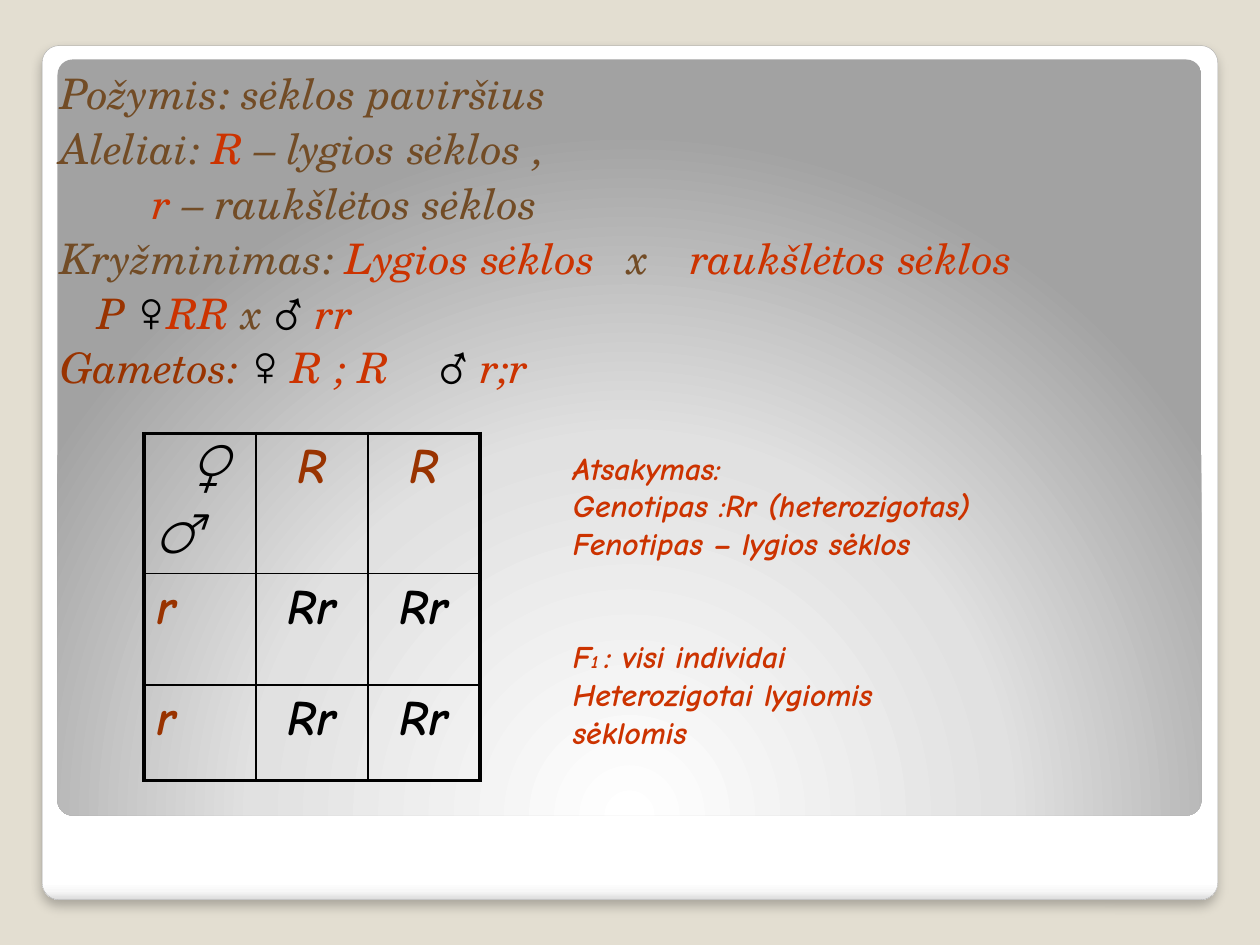
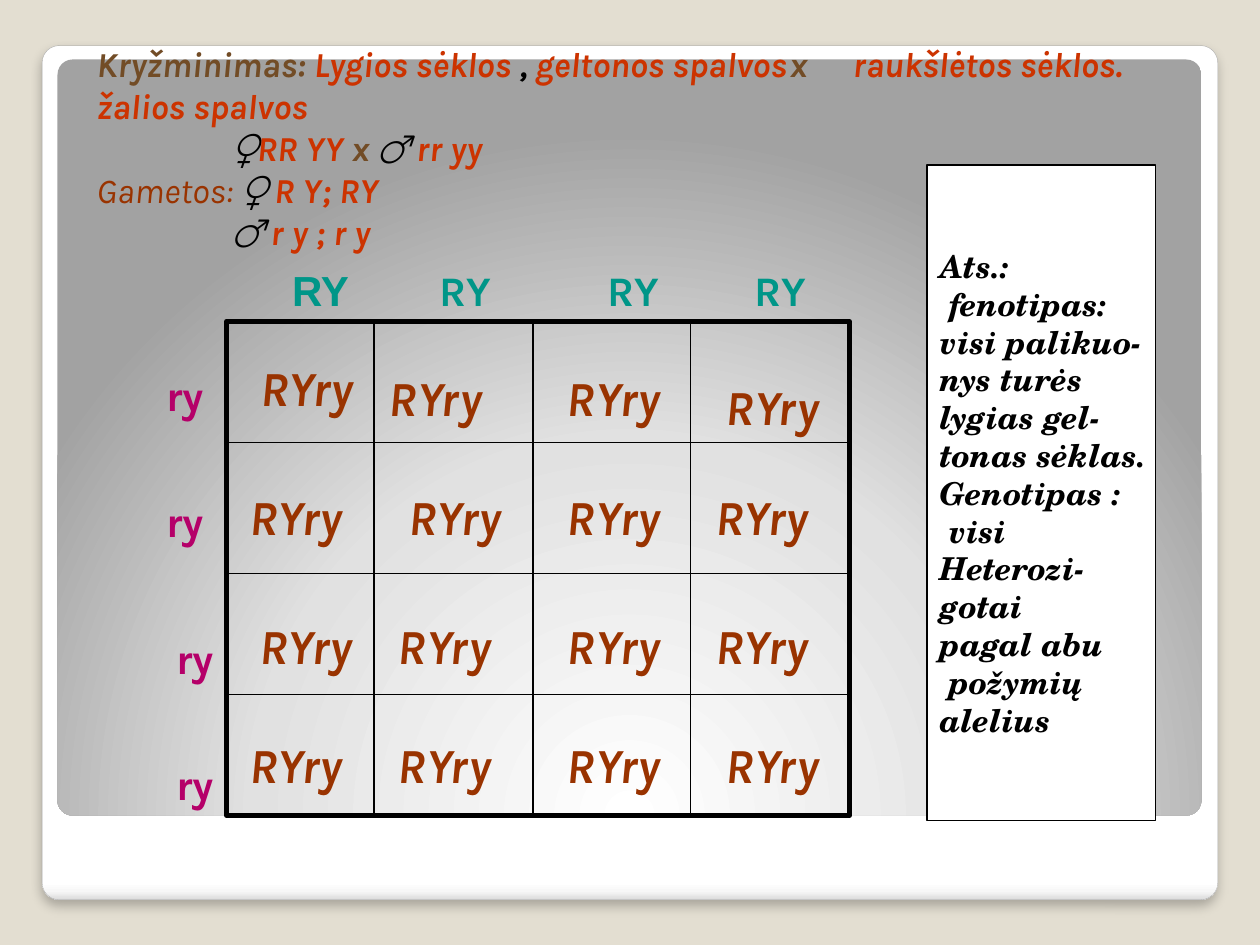
from lxml import etree
from pptx import Presentation
from pptx.dml.color import RGBColor
from pptx.enum.shapes import MSO_CONNECTOR, MSO_SHAPE
from pptx.enum.text import MSO_ANCHOR, MSO_AUTO_SIZE, PP_ALIGN
from pptx.oxml import parse_xml
from pptx.oxml.ns import nsdecls, qn
from pptx.util import Cm, Pt

RECT, ROUND = MSO_SHAPE.RECTANGLE, MSO_SHAPE.ROUNDED_RECTANGLE
LINE = MSO_CONNECTOR.STRAIGHT
LEFT, CENTER = PP_ALIGN.LEFT, PP_ALIGN.CENTER
MIDDLE = MSO_ANCHOR.MIDDLE
GROW, FIXED = MSO_AUTO_SIZE.SHAPE_TO_FIT_TEXT, MSO_AUTO_SIZE.NONE

SAND = RGBColor(0xE3, 0xDE, 0xD1)
GREY = RGBColor(0xA4, 0xA4, 0xA4)
WHITE = RGBColor(0xFF, 0xFF, 0xFF)
BLACK = RGBColor(0, 0, 0)
BROWN = RGBColor(0x72, 0x4C, 0x26)
RED = RGBColor(0xCC, 0x33, 0x00)
RUST = RGBColor(0x99, 0x33, 0x00)
TEAL = RGBColor(0x00, 0x96, 0x88)
PINK = RGBColor(0xB5, 0x00, 0x69)

SERIF, COMIC, KARLA, ARIAL = "TeX Gyre Schola", "Comic Neue", "Karla", "Arial"


def write(frame, rows, face, size, color, bold=False, italic=False):
    """Fill a frame; a row is a text or a list of texts and (text, color)."""
    for n, row in enumerate(rows):
        para = frame.add_paragraph() if n else frame.paragraphs[0]
        font = para.font
        font.name, font.size = face, Pt(size)
        font.bold, font.italic = bold, italic
        font.color.rgb = color
        para.alignment = LEFT
        for piece in [row] if isinstance(row, str) else row:
            text, tint = (piece, None) if isinstance(piece, str) else piece
            run = para.add_run()
            run.text = text
            if tint is not None:
                run.font.color.rgb = tint


def indent(para, left, *tabs):
    """Set a plain left indent and tab stops, without a bullet."""
    props = para._p.get_or_add_pPr()
    props.set("marL", str(Cm(left)))
    props.set("indent", "0")
    last = props.find(qn("a:defRPr"))
    last.addprevious(parse_xml(f"<a:buNone {nsdecls('a')}/>"))
    if tabs:
        stops = "".join(f'<a:tab pos="{Cm(t)}" algn="l"/>' for t in tabs)
        last.addprevious(
            parse_xml(f"<a:tabLst {nsdecls('a')}>{stops}</a:tabLst>"))


def add_text(slide, box, rows, face, size, color, wrap=True, **style):
    frame = slide.shapes.add_textbox(*map(Cm, box)).text_frame
    frame.word_wrap = wrap
    frame.auto_size = GROW
    write(frame, rows, face, size, color, **style)
    return frame


def add_box(slide, kind, box, width=None, line=BLACK, fill=None):
    shape = slide.shapes.add_shape(kind, *map(Cm, box))
    shape.shadow.inherit = False
    if fill is None:
        shape.fill.background()
    else:
        shape.fill.solid()
        shape.fill.fore_color.rgb = fill
    if width is None:
        shape.line.fill.background()
    else:
        shape.line.color.rgb = line
        shape.line.width = Pt(width)
    return shape


def add_rule(slide, *ends):
    rule = slide.shapes.add_connector(LINE, *map(Cm, ends))
    rule.line.color.rgb = BLACK
    rule.line.width = Pt(1)
    etree.SubElement(rule.element.spPr, qn("a:effectLst"))


def shade(shape, stops, way):
    """Replace an empty fill by a gradient."""
    marks = "".join(f'<a:gs pos="{at * 1000}"><a:srgbClr val="{tint}"/></a:gs>'
                    for at, tint in stops)
    props = shape.element.spPr
    props.replace(props.find(qn("a:noFill")), parse_xml(
        f'<a:gradFill {nsdecls("a")} rotWithShape="1">'
        f"<a:gsLst>{marks}</a:gsLst>{way}</a:gradFill>"))


def set_master(deck, slide):
    """Give the master the sand ground, the white card and the grey panel."""
    master = deck.slide_master
    master.background.fill.solid()
    master.background.fill.fore_color.rgb = SAND
    card = add_box(slide, ROUND, (0.85, 0.92, 23.7, 17.22), 0.16, GREY)
    shade(card, [(0, "FFFFFF"), (98, "FFFFFF"), (99, "F7F7F7"),
                 (100, "DADADA")], '<a:lin ang="5400000" scaled="0"/>')
    card.element.spPr.find(qn("a:effectLst")).append(parse_xml(
        f'<a:outerShdw {nsdecls("a")} blurRad="{Pt(6)}" dist="{Pt(4)}" '
        'dir="5400000" algn="t" rotWithShape="0"><a:srgbClr val="000000">'
        '<a:alpha val="25000"/></a:srgbClr></a:outerShdw>'))
    panel = add_box(slide, ROUND, (1.16, 1.2, 23.06, 15.24))
    shade(panel, [(0, "FFFFFF"), (55, "E1E1E1"), (100, "A2A2A2")],
          '<a:path path="circle"><a:fillToRect l="50000" t="175000" '
          'r="50000" b="-75000"/></a:path>')
    for n, shape in enumerate((card, panel)):
        shape.adjustments[0] = 0.02
        shape.element.nvSpPr.cNvPr.set("id", str(20 + n))
        master.shapes.element.insert(2 + n, shape.element)


def edge(cell, sides):
    """Draw cell borders; sides are widths for left, right, top, bottom."""
    props = cell._tc.get_or_add_tcPr()
    for n, (tag, width) in enumerate(zip(("lnL", "lnR", "lnT", "lnB"), sides)):
        props.insert(n, parse_xml(
            f'<a:{tag} {nsdecls("a")} w="{Pt(width)}"><a:solidFill>'
            f'<a:srgbClr val="{BLACK}"/></a:solidFill></a:{tag}>'))


def add_cross(slide):
    """Add the table that crosses RR with rr."""
    texts = [["♀\n♂", "R", "R"], ["r", "Rr", "Rr"], ["r", "Rr", "Rr"]]
    high = (2.64, 2.24, 1.93)
    table = slide.shapes.add_table(
        3, 3, Cm(2.9), Cm(8.74), Cm(6.78), Cm(sum(high))).table
    table.first_row = table.horz_banding = False
    for n in range(3):
        table.columns[n].width = Cm(2.26)
        table.rows[n].height = Cm(high[n])
    for r, row in enumerate(texts):
        for c, text in enumerate(row):
            cell = table.cell(r, c)
            cell.fill.background()
            edge(cell, [2.25 if outer else 1
                        for outer in (c == 0, c == 2, r == 0, r == 2)])
            tint = RUST if (r == 0) != (c == 0) else BLACK
            write(cell.text_frame, text.split("\n"), COMIC, 28, tint,
                  bold=True, italic=True)
            if c:
                cell.text_frame.paragraphs[0].alignment = CENTER
    female, male = table.cell(0, 0).text_frame.paragraphs
    indent(female, 0.7)
    male.space_before = Pt(5.6)


def fill_mono(slide):
    """Cross with one trait."""
    title, body = slide.placeholders
    title.element.getparent().remove(title.element)
    body.left, body.top, body.width, body.height = map(
        Cm, (0.71, 1.12, 24, 17))
    frame = body.text_frame
    frame.auto_size = FIXED
    frame.margin_left, frame.margin_top = Cm(0.51), Cm(0.25)
    write(frame, [
        "Požymis: sėklos paviršius",
        ["Aleliai: ", ("R", RED), " – lygios sėklos ,"],
        [("r", RED), " – raukšlėtos sėklos"],
        ["Kryžminimas: ", ("Lygios sėklos\t", RED), "x\t",
         ("raukšlėtos sėklos", RED)],
        [("P ", RUST), ("♀", BLACK), ("RR ", RED), "x ", ("♂ ", BLACK),
         ("rr", RED)],
        [("Gametos: ", RUST), ("♀ ", BLACK), ("R ; R\t", RED), ("♂ ", BLACK),
         ("r;r", RED)],
    ], SERIF, 24, BROWN, italic=True)
    places = [(0,), (0,), (1.85,), (0, 11.68, 12.8), (0.74,), (0, 7.34)]
    for para, place in zip(frame.paragraphs, places):
        para.space_before = Pt(2.5)
        indent(para, *place)

    # Answer
    frame = add_text(slide, (11.3, 8.92, 12.7, 6.4), [
        "Atsakymas:", "Genotipas :Rr (heterozigotas)",
        "Fenotipas – lygios sėklos", ["F", "1 ", ": visi individai"],
        "Heterozigotai lygiomis", "sėklomis",
    ], COMIC, 18, RED, bold=True, italic=True)
    first = frame.paragraphs[3]
    first.space_before = Pt(43)
    first.runs[1].font.size = Pt(10.5)
    add_cross(slide)


def fill_duo(slide):
    """Cross with two traits."""
    frame = add_text(slide, (1.7, 0.74, 23.01, 4.52), [
        ["Kryžminimas: ", ("Lygios sėklos ", RED), (", ", BLACK),
         ("geltonos spalvos\t", RED), "x\t",
         ("raukšlėtos sėklos. žalios spalvos", RED)],
        [("♀", BLACK), ("RR YY ", RED), "x", (" ♂ ", BLACK), ("rr yy", RED)],
        [("Gametos: ", RUST), ("♀ ", BLACK), ("R Y; RY", RED)],
        [("♂ ", BLACK), ("r y ; r y", RED)],
    ], KARLA, 20, BROWN, bold=True, italic=True)
    lines = frame.paragraphs
    lines[2].runs[0].font.bold = False
    indent(lines[0], 0, 14.4, 15.25)
    indent(lines[1], 2.72)
    indent(lines[3], 2.72)

    # Answer
    box = add_box(slide, RECT, (18.69, 3.33, 4.6, 13.21), 0.75, fill=WHITE)
    frame = box.text_frame
    frame.word_wrap = False
    frame.vertical_anchor = MIDDLE
    write(frame, [
        "Ats.:", " fenotipas:", "visi palikuo-", "nys turės", "lygias gel-",
        "tonas sėklas.", "Genotipas :", " visi", "Heterozi-", "gotai",
        "pagal abu", " požymių", "alelius",
    ], SERIF, 18, BLACK, bold=True, italic=True)

    # Gametes along the top and the left side
    for n, x in enumerate((5.64, 8.61, 11.99, 14.96)):
        add_text(slide, (x, 5.21, 1.68, 1.27), ["RY"], KARLA if n else ARIAL,
                 24, TEAL, wrap=False, bold=True)
    for x, y in ((3.1, 7.32), (3.1, 9.86), (3.3, 12.62), (3.3, 15.16)):
        add_text(slide, (x, y, 1.3, 1.27), ["ry"], KARLA, 24, PINK,
                 wrap=False, bold=True)

    # Grid
    left, top, wide, high = 4.57, 6.48, 12.55, 9.96
    for x in (7.54, 10.74, 13.92):
        add_rule(slide, x, top, x, top + high)
    for y in (8.92, 11.56, 14):
        add_rule(slide, left, y, left + wide, y)
    add_box(slide, RECT, (left, top, wide, high), 3)

    # Offspring, one row of (left, top) places per grid row
    spots = [
        [(5, 7.09), (7.59, 7.29), (11.18, 7.29), (14.38, 7.47)],
        [(x, 9.68) for x in (4.78, 7.98, 11.18, 14.17)],
        [(x, 12.29) for x in (4.98, 7.77, 11.18, 14.17)],
        [(x, 14.68) for x in (4.78, 7.77, 11.18, 14.38)],
    ]
    for row in spots:
        for x, y in row:
            add_text(slide, (x, y, 2.82, 1.45), ["RYry"], KARLA, 28, RUST,
                     wrap=False, bold=True, italic=True)


def main():
    deck = Presentation()
    deck.slide_width, deck.slide_height = Cm(25.4), Cm(19.05)
    mono = deck.slides.add_slide(deck.slide_layouts[1])
    duo = deck.slides.add_slide(deck.slide_layouts[6])
    set_master(deck, mono)
    fill_mono(mono)
    fill_duo(duo)
    deck.save("out.pptx")


if __name__ == "__main__":
    main()
